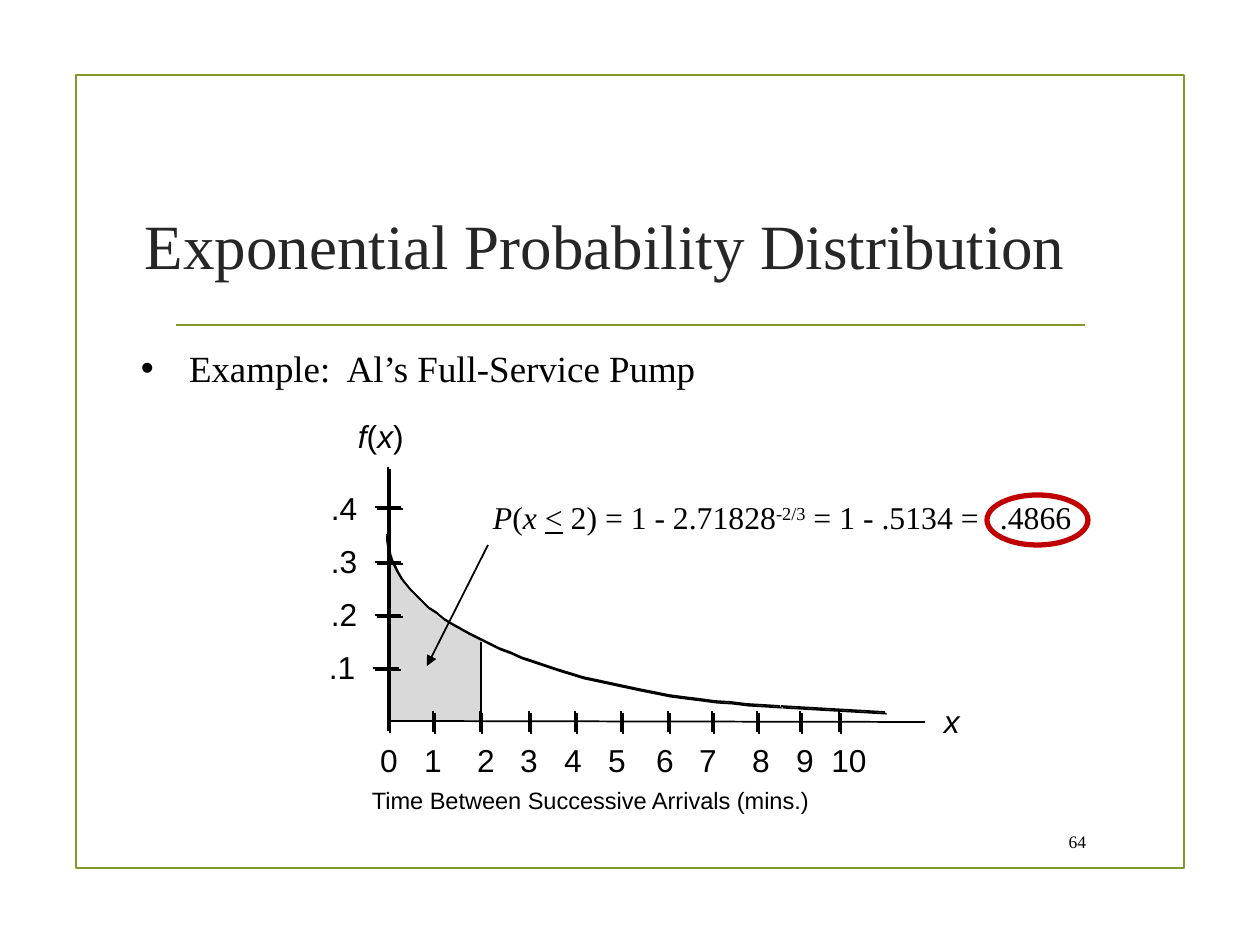
from dataclasses import dataclass
from lxml.etree import SubElement as Sub
from pptx import Presentation
from pptx.dml.color import RGBColor as Rgb
from pptx.enum.shapes import MSO_CONNECTOR as Conn, MSO_SHAPE as Kind
from pptx.enum.text import MSO_ANCHOR as Anchor, MSO_AUTO_SIZE as Auto, PP_ALIGN as Align
from pptx.oxml.ns import qn
from pptx.util import Emu, Pt

SCALE = 914400 / 126


@dataclass(frozen=True)
class Theme:
    """Colours, fonts and type sizes."""
    ink: str = "000000"
    head: str = "262626"
    green: str = "83992A"
    red: str = "C00000"
    shade: str = "D9D9D9"
    serif: str = "Times New Roman"
    sans: str = "Arial"
    title: float = 36
    body: float = 21.1
    label: float = 18.1
    note: float = 13.5
    page: float = 10


T = Theme()


def px(n):
    """Turn pixels into EMU."""
    return Emu(round(n * SCALE))


def stroke(shape, color, width):
    """Set the outline of a shape."""
    shape.line.color.rgb = Rgb.from_string(color)
    shape.line.width = Pt(width)


def effect(props, shadow):
    """Give shape properties an effect list, with a hard shadow if wanted."""
    fx = props.find(qn("a:effectLst"))
    if fx is None:
        fx = Sub(props, qn("a:effectLst"))
    if shadow:
        cast = Sub(fx, qn("a:outerShdw"), dist="17780", dir="2700000",
                   algn="ctr", rotWithShape="0")
        Sub(cast, qn("a:srgbClr"), val=T.ink)


def line(slide, x1, y1, x2, y2, color=T.ink, width=1, shadow=False, arrow=False):
    """Draw a straight line, with an arrowhead at its start if wanted."""
    rule = slide.shapes.add_connector(Conn.STRAIGHT, px(x1), px(y1), px(x2), px(y2))
    stroke(rule, color, width)
    if arrow:
        Sub(rule.line._get_or_add_ln(), qn("a:headEnd"), type="triangle")
    effect(rule._element.spPr, shadow)


def frame(slide, kind, box, color, width):
    """Draw an unfilled preset shape."""
    shape = slide.shapes.add_shape(kind, *map(px, box))
    shape.shadow.inherit = False
    shape.fill.background()
    stroke(shape, color, width)


def outline(slide, points, closed):
    """Draw a shaded area if closed, else a shadowed curve."""
    build = slide.shapes.build_freeform(*points[0], scale=SCALE)
    build.add_line_segments(points[1:], close=closed)
    shape = build.convert_to_shape()
    shape.shadow.inherit = False
    if closed:
        shape.fill.solid()
        shape.fill.fore_color.rgb = Rgb.from_string(T.shade)
        shape.line.fill.background()
    else:
        shape.fill.background()
        stroke(shape, T.ink, 1)
        effect(shape._element.spPr, True)


def fill_text(shape, runs, size, font, color=T.ink, align=Align.LEFT,
              anchor=Anchor.TOP, tabs=(), tab="l", bullet=None):
    """Write one paragraph of (text, style) runs; styles are i, u and s (super)."""
    area = shape.text_frame
    area.word_wrap, area.auto_size = True, Auto.NONE
    area.vertical_anchor = anchor
    area.margin_left = area.margin_right = px(9)
    area.margin_top = area.margin_bottom = px(5)
    para = area.paragraphs[0]
    para.alignment = align
    props = para._p.get_or_add_pPr()
    if bullet:
        props.set("marL", str(px(48)))
        props.set("indent", str(-px(48)))
        Sub(props, qn("a:buFont"), typeface=T.sans)
        Sub(props, qn("a:buChar"), char=bullet)
    if tabs:
        stops = Sub(props, qn("a:tabLst"))
        for stop in tabs:
            Sub(stops, qn("a:tab"), pos=str(px(stop)), algn=tab)
    para.font.size, para.font.name = Pt(size), font
    para.font.color.rgb = Rgb.from_string(color)
    for words, style in runs:
        run = para.add_run()
        run.text = words
        if style == "i":
            run.font.italic = True
        elif style == "u":
            run.font.underline = True
        elif style == "s":
            run._r.get_or_add_rPr().set("baseline", "30000")


def text(slide, box, runs, size=T.label, font=T.sans, **look):
    """Add a text box."""
    runs = [(runs, "")] if isinstance(runs, str) else runs
    fill_text(slide.shapes.add_textbox(*map(px, box)), runs, size, font, **look)


def bezier(a, b, c, d, steps=40):
    """Sample a cubic curve."""
    ts = [i / steps for i in range(steps + 1)]
    return [tuple(round((1 - t) ** 3 * p + 3 * t * (1 - t) ** 2 * q
                        + 3 * t * t * (1 - t) * r + t ** 3 * s, 2)
                  for p, q, r, s in zip(a, b, c, d)) for t in ts]


def axes(slide):
    """Draw both axes with their ticks and labels."""
    ticks = [(373, 668), (375, 615), (375, 562), (375, 507)]
    for i, (x, y) in enumerate(ticks):
        line(slide, x, y, x + 26, y, shadow=True)
        text(slide, (x - 53, 643 - 53 * i, 50, 48), f".{i + 1}")
    for x in (433, 480, 529, 575, 621, 668, 712, 757, 800, 839):
        line(slide, x, 711, x, 732, shadow=True)
    line(slide, 388, 467, 388, 731, shadow=True)
    line(slide, 388, 721, 925, 722)
    mids = (389, 433, 486, 529, 573, 617, 665, 708, 761, 805, 849)
    text(slide, (363, 736, 540, 48), "".join(f"\t{n}" for n in range(len(mids))),
         tabs=[x - 372 for x in mids], tab="ctr")
    text(slide, (349, 412, 75, 48), [("f", "i"), ("(", ""), ("x", "i"), (")", "")])
    text(slide, (935, 697, 40, 48), [("x", "i")])
    text(slide, (363, 781, 480, 38), "Time Between Successive Arrivals (mins.)", T.note)


def density(slide):
    """Draw the density curve and the area up to 2."""
    curve = bezier((387, 534), (383, 619), (559, 695), (780, 706))
    area = [p for p in curve if p[0] <= 481]
    outline(slide, [(388, 721), *area, (481, 641), (481, 721)], True)
    line(slide, 481, 721, 481, 642)
    outline(slide, curve, False)
    line(slide, 781, 706, 885, 712, shadow=True)
    line(slide, 427, 666, 488, 545, arrow=True)


def main():
    """Build the slide."""
    deck = Presentation()
    deck.slide_width, deck.slide_height = px(1260), px(945)
    slide = deck.slides.add_slide(deck.slide_layouts[5])
    frame(slide, Kind.RECTANGLE, (76, 75, 1108, 793), T.green, 1.25)
    line(slide, 176, 325, 1085, 325, T.green, 1.25)
    title = slide.shapes.title
    title.left, title.top, title.width, title.height = map(px, (136, 209, 1073, 71))
    fill_text(title, [("Exponential Probability Distribution", "")], T.title, T.serif,
              color=T.head, anchor=Anchor.MIDDLE)
    text(slide, (132, 341, 916, 50), "Example:  Al’s Full-Service Pump",
         T.body, T.serif, bullet="•")
    density(slide)
    axes(slide)
    text(slide, (484, 475, 682, 84),
         [("P", "i"), ("(", ""), ("x ", "i"), ("<", "u"), (" 2) = 1 - 2.71828", ""),
          ("-2/3", "s"), (" = 1 - .5134 =\t.4866", "")],
         font=T.serif, anchor=Anchor.MIDDLE, tabs=[507])
    frame(slide, Kind.OVAL, (987, 495, 101, 50), T.red, 3)
    text(slide, (1045, 822, 50, 39), "64", T.page, T.serif,
         align=Align.RIGHT, anchor=Anchor.MIDDLE)
    deck.save("out.pptx")


if __name__ == "__main__":
    main()
